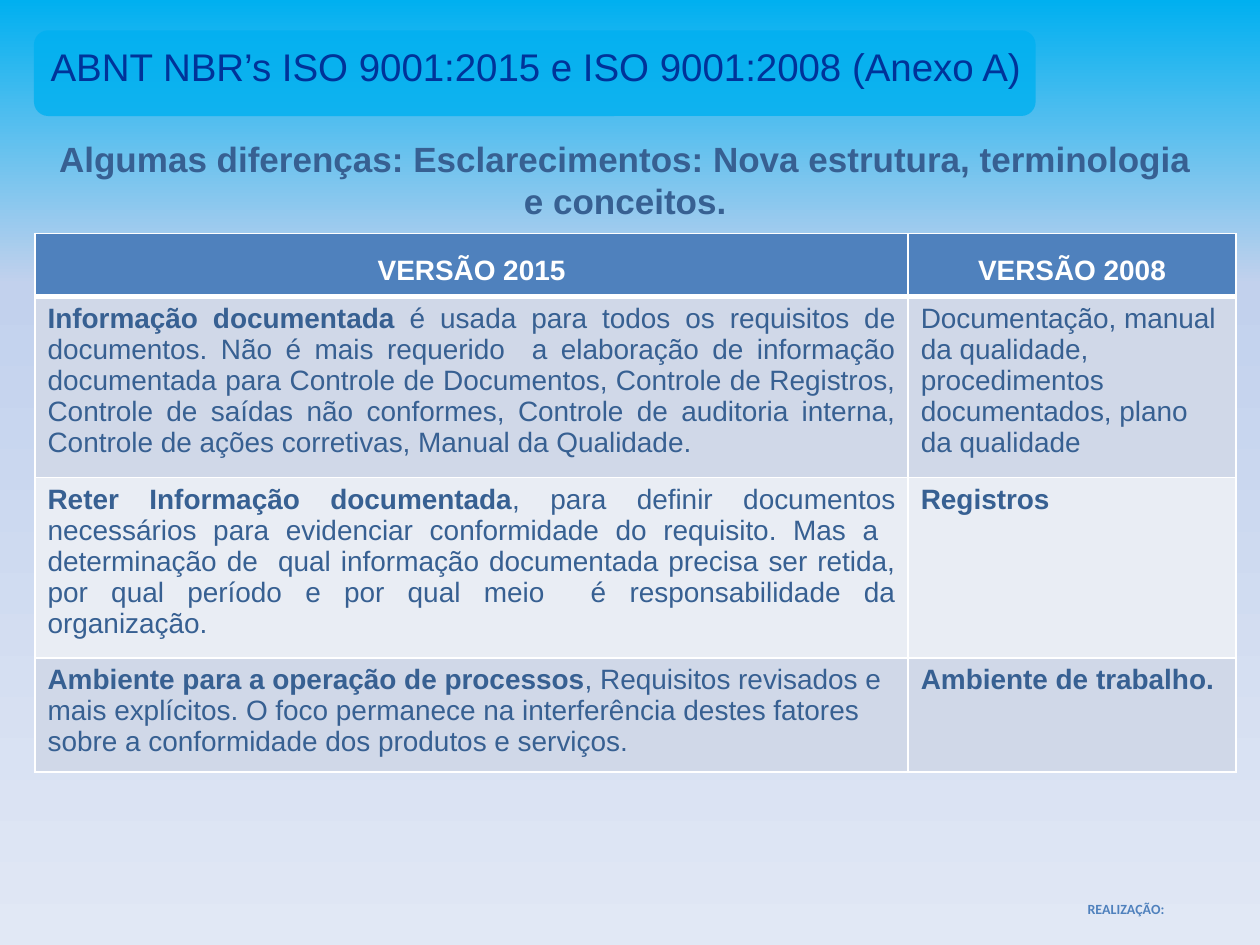
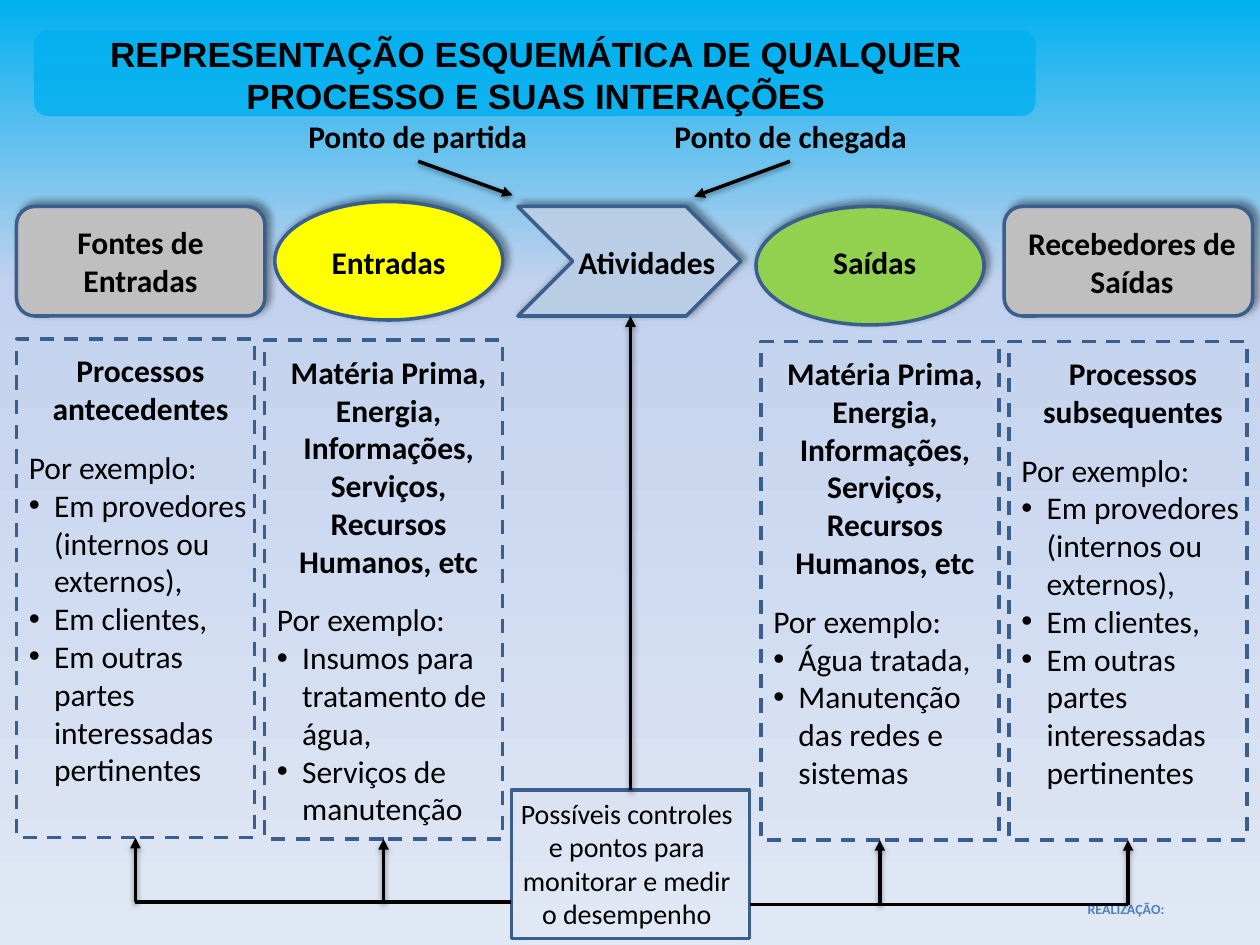
from dataclasses import dataclass

from lxml import etree
from pptx import Presentation
from pptx.dml.color import RGBColor
from pptx.enum.dml import MSO_LINE
from pptx.enum.shapes import MSO_CONNECTOR, MSO_SHAPE
from pptx.enum.text import PP_ALIGN
from pptx.oxml.ns import qn
from pptx.util import Pt

LEFT, CENTER, JUSTIFY = PP_ALIGN.LEFT, PP_ALIGN.CENTER, PP_ALIGN.JUSTIFY
ROUNDED, OVAL = MSO_SHAPE.ROUNDED_RECTANGLE, MSO_SHAPE.OVAL
CHEVRON, RECTANGLE = MSO_SHAPE.CHEVRON, MSO_SHAPE.RECTANGLE
STRAIGHT, DASH = MSO_CONNECTOR.STRAIGHT, MSO_LINE.DASH
TOP, BOTTOM = 0, 2


@dataclass(frozen=True)
class Theme:
    heading_font: str = "Arial"
    body_font: str = "Calibri"
    black: str = "000000"
    white: str = "FFFFFF"
    navy: str = "003399"
    text_blue: str = "376092"
    accent: str = "4F81BD"
    outline: str = "3A5F8C"
    sky: str = "00B0F0"
    gray: str = "BFBFBF"
    yellow: str = "FFFF00"
    green: str = "92D050"
    pale_blue: str = "B9CDE5"
    row_dark: str = "D0D8E8"
    row_light: str = "E9EDF4"
    background: tuple = ((0, "00B0F0"), (30, "C2D1ED"), (100, "E1E8F5"))
    title_size: int = 22
    subtitle_size: int = 20
    body_size: int = 18
    small_size: int = 16
    footer_size: int = 8


THEME = Theme()

VERSION_ROWS = [
    (("Informação documentada ",
      "é usada para todos os requisitos de documentos. Não é mais requerido  a elaboração de "
      "informação documentada para Controle de Documentos, Controle de Registros, Controle de "
      "saídas não conformes, Controle de auditoria interna, Controle de ações corretivas, "
      "Manual da Qualidade."),
     ("", "Documentação, manual da qualidade, procedimentos documentados, plano da qualidade"),
     JUSTIFY),
    (("Reter Informação documentada",
      ", para definir documentos necessários para evidenciar conformidade do requisito. Mas a  "
      "determinação de  qual informação documentada precisa ser retida, por qual período e por "
      "qual meio  é responsabilidade da organização."),
     ("Registros", ""), JUSTIFY),
    (("Ambiente para a operação de processos",
      ", Requisitos revisados e mais explícitos. O foco permanece na interferência destes "
      "fatores sobre a conformidade dos produtos e serviços."),
     ("Ambiente de trabalho.", ""), LEFT),
]

STEPS = [
    (ROUNDED, THEME.gray, (9.4, 118, 142, 62.6), "Fontes de Entradas", (9.4, 123.8)),
    (OVAL, THEME.yellow, (157, 115.2, 130.3, 67.7), "Entradas", (151.2, 135.4)),
    (CHEVRON, THEME.pale_blue, (296, 118, 127.4, 62.6), "Atividades", (298.8, 135.4)),
    (OVAL, THEME.green, (432, 118, 130.3, 67.7), "Saídas", (429, 135.4)),
    (ROUNDED, THEME.gray, (573.8, 118, 142, 62.6), "Recebedores de Saídas", (576, 124.6)),
]

MATERIALS = "Matéria Prima, Energia, Informações, Serviços, Recursos Humanos, etc"
PARTIES = ["Em provedores (internos ou externos),", "Em clientes,",
           "Em outras partes interessadas pertinentes"]
PANELS = [
    (0, 193.7, "Processos antecedentes", PARTIES),
    (1, 194.4, MATERIALS, ["Insumos para tratamento de água,", "Serviços de manutenção"]),
    (3, 195.1, MATERIALS, ["Água tratada,", "Manutenção das redes e sistemas"]),
    (4, 195.1, "Processos subsequentes", PARTIES),
]
PANEL_LEFT, PANEL_PITCH, PANEL_WIDTH, PANEL_HEIGHT = 9.4, 141.8, 136, 285


def color(value):
    return RGBColor.from_string(value)


def points(*values):
    return [Pt(value) for value in values]


def style_span(span, size, ink, font, bold=False):
    span.font.size = Pt(size)
    span.font.name = font
    span.font.bold = bold
    span.font.color.rgb = color(ink)


def add_text(page, box, text, size, ink=THEME.black, font=THEME.body_font, bold=True):
    frame = page.shapes.add_textbox(*points(*box)).text_frame
    frame.word_wrap = True
    frame.text = text
    para = frame.paragraphs[0]
    para.alignment = CENTER
    style_span(para.runs[0], size, ink, font, bold)
    return frame


def add_shadow(effects, alpha, blur, distance, angle):
    shadow = etree.SubElement(effects, qn("a:outerShdw"), blurRad=str(Pt(blur)),
                              dist=str(Pt(distance)), dir=str(angle * 60000),
                              algn="ctr", rotWithShape="0")
    shade = etree.SubElement(shadow, qn("a:srgbClr"), val=THEME.black)
    etree.SubElement(shade, qn("a:alpha"), val=str(alpha * 1000))


def add_outlined(page, kind, box, fill=None, dash=None):
    shape = page.shapes.add_shape(kind, *points(*box))
    shape.shadow.inherit = False
    shape.line.color.rgb = color(THEME.outline)
    shape.line.width = Pt(2)
    if dash:
        shape.line.dash_style = dash
    if fill:
        shape.fill.solid()
        shape.fill.fore_color.rgb = color(fill)
        add_shadow(shape._element.spPr.find(qn("a:effectLst")), 40, 4, 3, 315)
    else:
        shape.fill.background()
    return shape


def add_line(page, start, end, arrow=True):
    line = page.shapes.add_connector(STRAIGHT, *points(*start, *end))
    line.line.color.rgb = color(THEME.black)
    line.line.width = Pt(2)
    properties = line._element.spPr
    effects = etree.SubElement(properties, qn("a:effectLst"))
    if arrow:
        etree.SubElement(properties.find(qn("a:ln")), qn("a:tailEnd"), type="triangle")
        add_shadow(effects, 38, 3.1, 1.6, 90)
    return line


def set_background(master):
    fill = master.background.fill
    fill.gradient()
    fill.gradient_angle = 270
    stops = master._element.find(".//" + qn("a:gsLst"))
    for stop in list(stops):
        stops.remove(stop)
    for position, value in THEME.background:
        stop = etree.SubElement(stops, qn("a:gs"), pos=str(position * 1000))
        etree.SubElement(stop, qn("a:srgbClr"), val=value)


def add_page(deck):
    page = deck.slides.add_slide(deck.slide_layouts[6])
    band = page.shapes.add_shape(ROUNDED, *points(19.4, 17.3, 572.4, 49))
    band.shadow.inherit = False
    band.line.fill.background()
    band.fill.solid()
    band.fill.fore_color.rgb = color(THEME.sky)
    sky = band._element.spPr.find(".//" + qn("a:srgbClr"))
    etree.SubElement(sky, qn("a:alpha"), val="80000")
    add_text(page, (609, 511.2, 69, 17.3), "REALIZAÇÃO:", THEME.footer_size, THEME.accent)
    return page


def fill_cell(cell, parts, alignment, fill, ink, bottom=1):
    para = cell.text_frame.paragraphs[0]
    para.alignment = alignment
    for text, bold in zip(parts, (True, False)):
        if text:
            span = para.add_run()
            span.text = text
            style_span(span, THEME.small_size, ink, THEME.heading_font, bold)
    properties = cell._tc.get_or_add_tcPr()
    for side, width in (("lnL", 1), ("lnR", 1), ("lnT", 1), ("lnB", bottom)):
        border = etree.SubElement(properties, qn("a:" + side), w=str(Pt(width)))
        solid = etree.SubElement(border, qn("a:solidFill"))
        etree.SubElement(solid, qn("a:srgbClr"), val=THEME.white)
    cell.fill.solid()
    cell.fill.fore_color.rgb = color(fill)
    return para


def add_version_table(page, box):
    heights = (35.5, 103.4, 103, 65)
    table = page.shapes.add_table(len(heights), 2, *points(*box)).table
    for column, width in zip(table.columns, (499, box[2] - 499)):
        column.width = Pt(width)
    for row, height in zip(table.rows, heights):
        row.height = Pt(height)
    for column, heading in enumerate(("VERSÃO 2015", "VERSÃO 2008")):
        para = fill_cell(table.cell(0, column), (heading, ""), CENTER,
                         THEME.accent, THEME.white, 3)
        para.line_spacing = 1.5
    for row, (current, previous, alignment) in enumerate(VERSION_ROWS, 1):
        fill = THEME.row_dark if row % 2 else THEME.row_light
        fill_cell(table.cell(row, 0), current, alignment, fill, THEME.text_blue)
        fill_cell(table.cell(row, 1), previous, LEFT, fill, THEME.text_blue)


def build_versions(deck):
    page = add_page(deck)
    add_text(page, (20, 20.9, 572.4, 33.8), "ABNT NBR’s ISO 9001:2015 e ISO 9001:2008 (Anexo A)",
             THEME.title_size, THEME.navy, THEME.heading_font, False)
    add_text(page, (20, 74.9, 674.6, 55.4),
             "Algumas diferenças: Esclarecimentos: Nova estrutura, terminologia e conceitos.",
             THEME.subtitle_size, THEME.text_blue, THEME.heading_font)
    add_version_table(page, (20, 133.5, 686.2, 306.9))


def add_step(page, kind, fill, box, label, label_at):
    add_outlined(page, kind, box, fill)
    add_text(page, (*label_at, 141.8, 51), label, THEME.body_size)


def add_panel(page, box, heading, examples):
    left, top, width, height = box
    frame = add_text(page, (left, top + 3.6, PANEL_PITCH, height - 3.6), heading, THEME.body_size)
    for index, text in enumerate(["Por exemplo:", *examples]):
        para = frame.add_paragraph()
        para.text = text
        if index:
            properties = para._p.get_or_add_pPr()
            properties.set("marL", str(Pt(14.4)))
            properties.set("indent", str(Pt(-14.4)))
            etree.SubElement(properties, qn("a:buFont"), typeface="Arial")
            etree.SubElement(properties, qn("a:buChar"), char="•")
        else:
            para.space_before = Pt(12)
        style_span(para.runs[0], THEME.body_size, THEME.black, THEME.body_font)
    return add_outlined(page, RECTANGLE, box, dash=DASH)


def add_controls(page, box):
    left, top, width, height = box
    add_text(page, (left - 5, top, PANEL_PITCH, height),
             "Possíveis controles e pontos para monitorar e medir o desempenho",
             THEME.small_size, bold=False)
    return add_outlined(page, RECTANGLE, box)


def add_feedback(page, panels, controls_box):
    left, top, width, height = controls_box
    centers = [PANEL_LEFT + PANEL_PITCH * column + PANEL_WIDTH / 2 for column, *rest in PANELS]
    levels = (515.5, 515.5, 517, 517)
    for panel, center, level in zip(panels, centers, levels):
        line = add_line(page, (center, level), (center, level - 36))
        line.end_connect(panel, BOTTOM)
    add_line(page, (centers[0], levels[0]), (left, levels[0]), arrow=False)
    add_line(page, (left + width, levels[-1]), (centers[-1], levels[-1]), arrow=False)


def build_process(deck):
    page = add_page(deck)
    for step in STEPS:
        add_step(page, *step)
    add_text(page, (167.8, 63.4, 141.8, 28.8), "Ponto de partida", THEME.body_size)
    add_text(page, (378, 63.4, 147.6, 28.8), "Ponto de chegada", THEME.body_size)
    add_line(page, (239, 92.2), (293, 111.6))
    add_line(page, (451.4, 92.2), (396.7, 112.3))
    panels = [add_panel(page, (PANEL_LEFT + PANEL_PITCH * column, top, PANEL_WIDTH, PANEL_HEIGHT),
                        heading, examples)
              for column, top, heading, examples in PANELS]
    controls_box = (292.3, 451.4, PANEL_WIDTH, 85)
    controls = add_controls(page, controls_box)
    add_feedback(page, panels, controls_box)
    rise = add_line(page, (360.3, 451.4), (360.3, 180.7))
    rise.begin_connect(controls, TOP)
    add_text(page, (20, 15.1, 572.4, 55.4),
             "REPRESENTAÇÃO ESQUEMÁTICA DE QUALQUER PROCESSO E SUAS INTERAÇÕES",
             THEME.subtitle_size, font=THEME.heading_font)


def main():
    deck = Presentation()
    deck.slide_width, deck.slide_height = points(720, 540)
    set_background(deck.slide_master)
    build_versions(deck)
    build_process(deck)
    deck.save("out.pptx")


if __name__ == "__main__":
    main()
